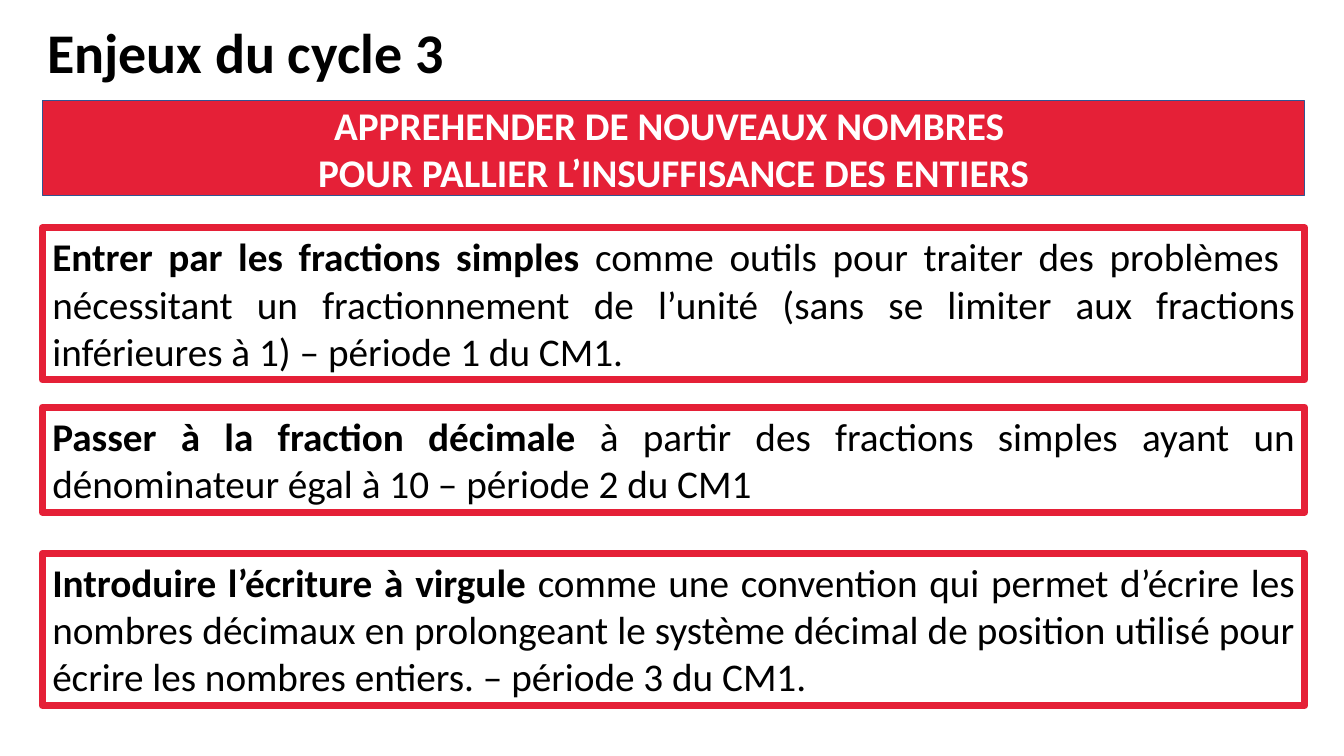
from pptx import Presentation
from pptx.dml.color import RGBColor
from pptx.enum.shapes import MSO_SHAPE
from pptx.enum.text import MSO_ANCHOR, PP_ALIGN
from pptx.util import Inches, Pt

RECT = MSO_SHAPE.RECTANGLE
TOP, MIDDLE = MSO_ANCHOR.TOP, MSO_ANCHOR.MIDDLE
LEFT, CENTER, JUSTIFY = PP_ALIGN.LEFT, PP_ALIGN.CENTER, PP_ALIGN.JUSTIFY

RED, BLUE, BLACK, WHITE = "E52037", "325491", "000000", "FFFFFF"
MARGIN, WIDTH = 0.42, 12.52

TITLE = "Enjeux du cycle 3"
BANNER = [
    "APPREHENDER DE NOUVEAUX NOMBRES ",
    "POUR PALLIER L’INSUFFISANCE DES ENTIERS",
]
STEPS = [
    (2.26, 1.51, "Entrer par les fractions simples ",
     "comme outils pour traiter des problèmes  nécessitant un fractionnement de l’unité "
     "(sans se limiter aux fractions inférieures à 1) – période 1 du CM1."),
    (4.04, 1.04, "Passer à la fraction décimale ",
     "à partir des fractions simples ayant un dénominateur égal à 10 – période 2 du CM1 "),
    (5.49, 1.51, "Introduire l’écriture à virgule ",
     "comme une convention qui permet d’écrire les nombres décimaux en prolongeant le système "
     "décimal de position utilisé pour écrire les nombres entiers. – période 3 du CM1."),
]


def color(value):
    return RGBColor.from_string(value)


def set_line(sp, value, width):
    sp.line.color.rgb = color(value)
    sp.line.width = Pt(width)


def write(sp, paragraphs, align, anchor=TOP, size=28, ink=BLACK):
    tf = sp.text_frame
    tf.word_wrap = True
    tf.vertical_anchor = anchor
    for i, runs in enumerate(paragraphs):
        p = tf.add_paragraph() if i else tf.paragraphs[0]
        p.alignment = align
        for text, bold in runs:
            r = p.add_run()
            r.text = text
            for name, value in {"name": "Calibri", "size": Pt(size), "bold": bold}.items():
                setattr(r.font, name, value)
            r.font.color.rgb = color(ink)


def inches(*lengths):
    return [Inches(n) for n in lengths]


prs = Presentation()
prs.slide_width, prs.slide_height = inches(13.33, 7.5)
s = prs.slides.add_slide(prs.slide_layouts[6])

title = s.shapes.add_textbox(*inches(0.37, 0.12, 12.96, 0.77))
write(title, [[(TITLE, True)]], LEFT, size=40)

banner = s.shapes.add_shape(RECT, *inches(MARGIN, 1, WIDTH, 0.94))
banner.shadow.inherit = False
banner.fill.solid()
banner.fill.fore_color.rgb = color(RED)
set_line(banner, BLUE, 1)
write(banner, [[(line, True)] for line in BANNER], CENTER, MIDDLE, ink=WHITE)

for top, height, lead, rest in STEPS:
    box = s.shapes.add_textbox(*inches(MARGIN, top, WIDTH, height))
    set_line(box, RED, 5)
    write(box, [[(lead, True), (rest, False)]], JUSTIFY)

prs.save("out.pptx")
